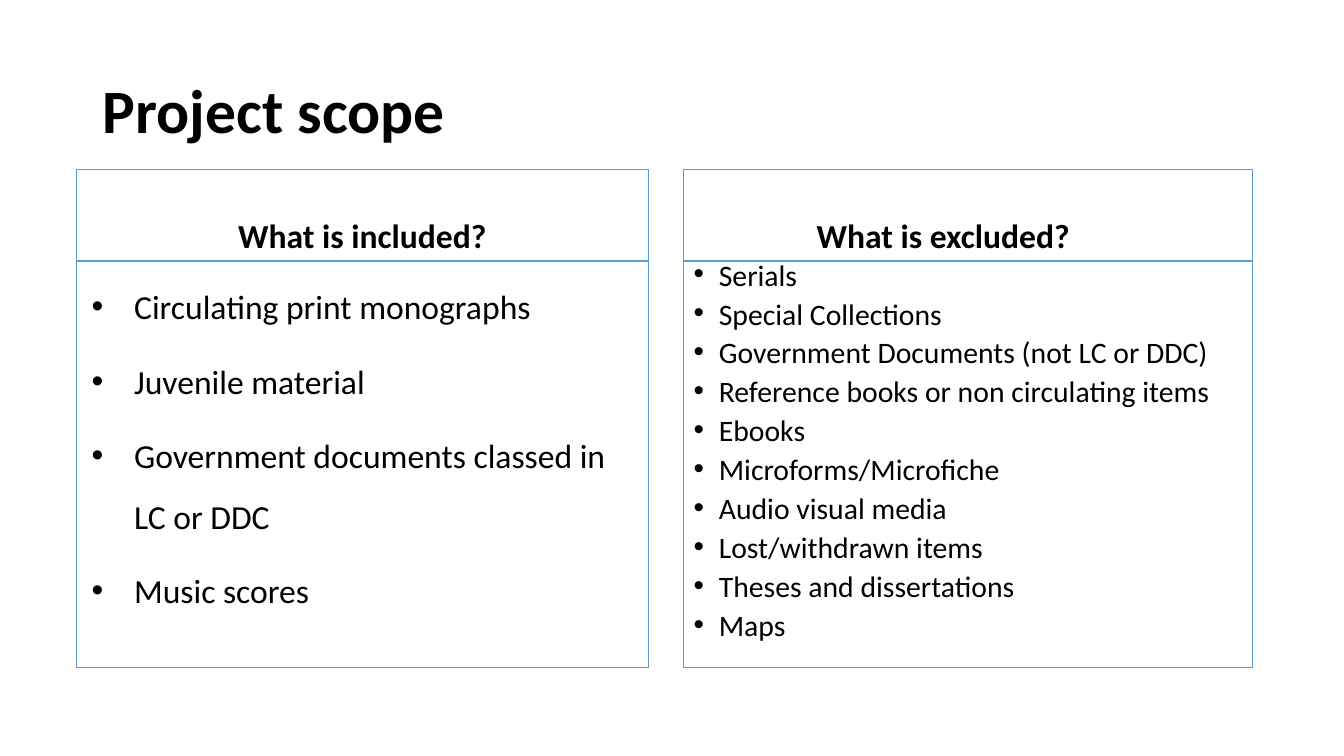
"""Build the project scope slide with its two compared lists."""
from dataclasses import dataclass

from pptx import Presentation
from pptx.dml.color import RGBColor
from pptx.enum.text import MSO_ANCHOR as Anchor, MSO_AUTO_SIZE as AutoSize, PP_ALIGN as Align
from pptx.shapes.placeholder import SlidePlaceholder
from pptx.util import Inches, Pt

FONT = "Calibri"
BLACK = RGBColor(0x00, 0x00, 0x00)
BLUE = RGBColor(0x5B, 0x9B, 0xD5)
SLIDE_WIDTH = Inches(13.33)
SLIDE_HEIGHT = Inches(7.5)
COLUMN = SLIDE_WIDTH / 100
ROW = SLIDE_HEIGHT / 100
PANEL_TOP, HEADING_ROWS, LIST_ROWS = 22.4, 12.13, 53.73


@dataclass(frozen=True)
class Panel:
    heading: str
    items: list[str]
    heading_index: int
    list_index: int
    column: float
    columns: float
    size: float
    line_spacing: float
    indent: float
    hanging: float


PANELS = [
    Panel(
        "What is included?",
        [
            "Circulating print monographs",
            "Juvenile material",
            "Government documents classed in LC or DDC",
            "Music scores",
        ],
        heading_index=1, list_index=2, column=5.7, columns=42.53,
        size=24, line_spacing=1.5, indent=0.47, hanging=0.42,
    ),
    Panel(
        "What is excluded?\t",
        [
            "Serials",
            "Special Collections",
            "Government Documents (not LC or DDC)",
            "Reference books or non circulating items",
            "Ebooks",
            "Microforms/Microfiche",
            "Audio visual media",
            "Lost/withdrawn items",
            "Theses and dissertations",
            "Maps",
        ],
        heading_index=3, list_index=4, column=50.86, columns=42.3,
        size=21.2, line_spacing=0.7, indent=0.25, hanging=0.25,
    ),
]


def place(box: SlidePlaceholder, column: float, row: float, columns: float, rows: float) -> None:
    """Move a placeholder to a cell range of the slide grid."""
    box.left, box.top = round(column * COLUMN), round(row * ROW)
    box.width, box.height = round(columns * COLUMN), round(rows * ROW)


def outline(box: SlidePlaceholder) -> None:
    """Give a placeholder the thin blue border."""
    box.line.color.rgb = BLUE
    box.line.width = Pt(0.75)


def write(
    box: SlidePlaceholder,
    lines: list[str],
    *,
    size: float,
    bold: bool = False,
    align: Align = Align.LEFT,
    anchor: Anchor = Anchor.TOP,
    line_spacing: float = 0.9,
    before: float = 10,
    indent: float = 0,
    hanging: float = 0,
) -> None:
    """Fill a placeholder with one formatted paragraph per line."""
    frame = box.text_frame
    frame.word_wrap = True
    frame.auto_size = AutoSize.NONE
    frame.vertical_anchor = anchor
    for number, line in enumerate(lines):
        para = frame.add_paragraph() if number else frame.paragraphs[0]
        para.alignment = align
        para.line_spacing = line_spacing
        para.space_before = Pt(before)
        properties = para._p.get_or_add_pPr()
        properties.set("marL", str(Inches(indent)))
        properties.set("indent", str(-Inches(hanging)))
        span = para.add_run()
        span.text = line
        span.font.name = FONT
        span.font.size = Pt(size)
        span.font.bold = bold
        span.font.color.rgb = BLACK


def main() -> None:
    """Build and save the slide."""
    deck = Presentation()
    deck.slide_width, deck.slide_height = SLIDE_WIDTH, SLIDE_HEIGHT
    page = deck.slides.add_slide(deck.slide_layouts.get_by_name("Comparison"))
    boxes = {box.placeholder_format.idx: box for box in page.placeholders}

    place(boxes[0], 6.9, 5.33, 86.25, 19.33)
    write(boxes[0], ["Project scope"], size=44, bold=True, anchor=Anchor.MIDDLE, before=0)

    for panel in PANELS:
        heading, listing = boxes[panel.heading_index], boxes[panel.list_index]
        place(heading, panel.column, PANEL_TOP, panel.columns, HEADING_ROWS)
        place(listing, panel.column, PANEL_TOP + HEADING_ROWS, panel.columns, LIST_ROWS)
        outline(heading)
        outline(listing)
        write(heading, [panel.heading], size=24, bold=True, align=Align.CENTER, anchor=Anchor.BOTTOM)
        write(
            listing, panel.items, size=panel.size, line_spacing=panel.line_spacing,
            indent=panel.indent, hanging=panel.hanging,
        )

    deck.save("out.pptx")


if __name__ == "__main__":
    main()
